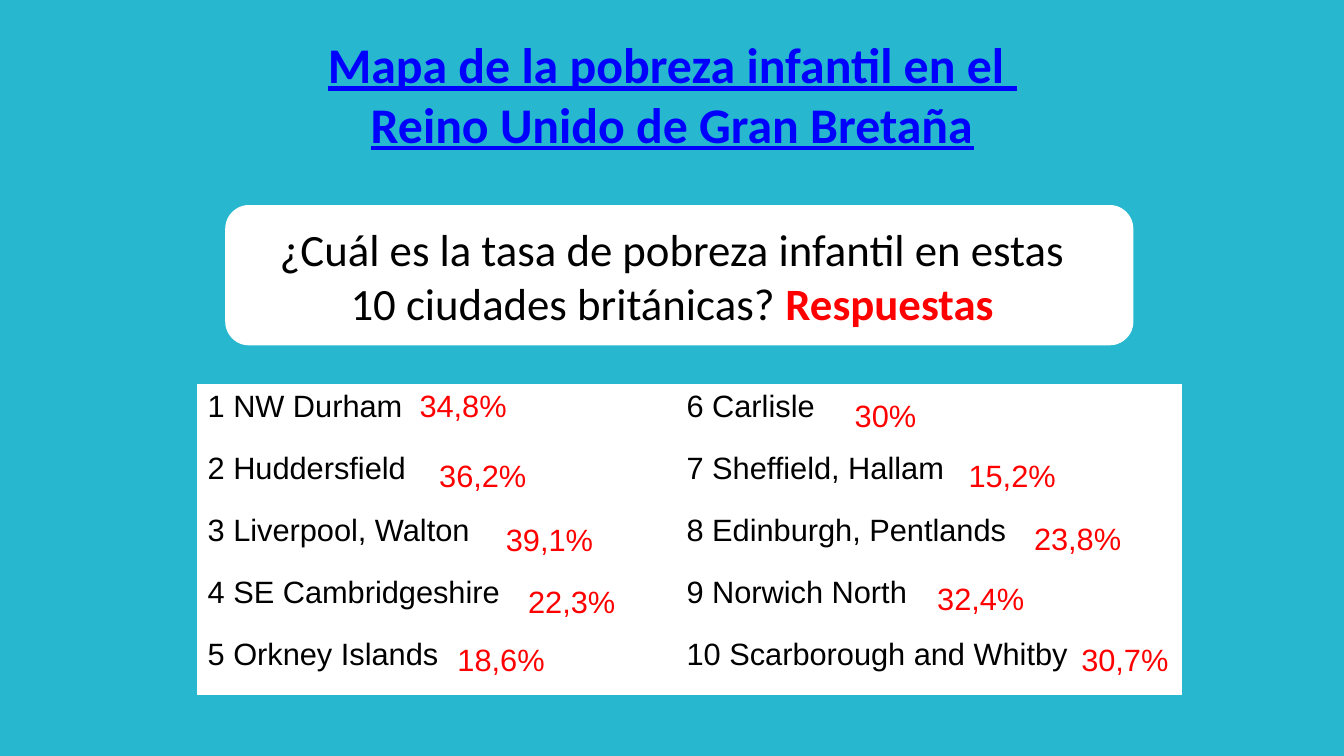
"""Build the slide with the child poverty rates of ten British cities."""
from pptx import Presentation
from pptx.dml.color import RGBColor
from pptx.enum.shapes import MSO_SHAPE
from pptx.enum.text import MSO_ANCHOR, PP_ALIGN
from pptx.util import Cm, Pt

TEAL = RGBColor(0x27, 0xB8, 0xCF)
WHITE = RGBColor(0xFF, 0xFF, 0xFF)
BLACK = RGBColor(0x00, 0x00, 0x00)
RED = RGBColor(0xFF, 0x00, 0x00)
BLUE = RGBColor(0x00, 0x00, 0xFF)

ROWS = [
    ("1 NW Durham  ", "6 Carlisle"),
    ("2 Huddersfield", "7 Sheffield, Hallam"),
    ("3 Liverpool, Walton", "8 Edinburgh, Pentlands"),
    ("4 SE Cambridgeshire", "9 Norwich North"),
    ("5 Orkney Islands", "10 Scarborough and Whitby"),
]
RATES = [
    ("36,2%", 10.82, 11.38),
    ("39,1%", 12.5, 13),
    ("22,3%", 13.06, 14.55),
    ("18,6%", 11.28, 16.03),
    ("30%", 21.29, 9.88),
    ("15,2%", 24.16, 11.38),
    ("23,8%", 25.81, 12.98),
    ("32,4%", 23.37, 14.48),
    ("30,7%", 27, 16.03),
]


def style(runs, size, name, color):
    """Set the font of some runs."""
    for r in runs:
        r.font.size = Pt(size)
        r.font.name = name
        r.font.color.rgb = color


def add_text(slide, text, left, top, width, height):
    """Add a wrapping text box and return its text frame."""
    tf = slide.shapes.add_textbox(Cm(left), Cm(top), Cm(width), Cm(height)).text_frame
    tf.word_wrap = True
    tf.text = text
    return tf


prs = Presentation()
prs.slide_width = Cm(33.87)
prs.slide_height = Cm(19.05)
s = prs.slides.add_slide(prs.slide_layouts[6])
s.background.fill.solid()
s.background.fill.fore_color.rgb = TEAL

panel = s.shapes.add_shape(MSO_SHAPE.ROUNDED_RECTANGLE, Cm(5.69), Cm(5.18), Cm(22.86), Cm(3.51))
panel.shadow.inherit = False
panel.fill.solid()
panel.fill.fore_color.rgb = WHITE
panel.line.color.rgb = WHITE
panel.line.width = Pt(0.75)

question = "¿Cuál es la tasa de pobreza infantil en estas\n10 ciudades británicas? "
tf = add_text(s, question, 5.51, 5.46, 22.86, 3.25)
for p in tf.paragraphs:
    p.alignment = PP_ALIGN.CENTER
    style(p.runs, 32, "Calibri", BLACK)
r = tf.paragraphs[-1].add_run()
r.text = "Respuestas"
style([r], 32, "Calibri", RED)
r.font.bold = True

table = s.shapes.add_table(5, 2, Cm(4.98), Cm(9.7), Cm(24.8), Cm(7.8)).table
table.columns[0].width = Cm(12.07)
table.columns[1].width = Cm(12.73)
table.first_row = False
table.horz_banding = False
for i, cities in enumerate(ROWS):
    for j, city in enumerate(cities):
        cell = table.cell(i, j)
        cell.fill.solid()
        cell.fill.fore_color.rgb = WHITE
        cell.text_frame.text = city
        style(cell.text_frame.paragraphs[0].runs, 22, "Arial", BLACK)
r = table.cell(0, 0).text_frame.paragraphs[0].add_run()
r.text = "34,8%"
style([r], 22, "Arial", RED)

tf = add_text(s, "", 5.51, 0.76, 22.86, 3.18)
tf.vertical_anchor = MSO_ANCHOR.MIDDLE
p = tf.paragraphs[0]
p.text = "Mapa de la pobreza infantil en el \vReino Unido de Gran Bretaña"
p.alignment = PP_ALIGN.CENTER
style(p.runs, 35.6, "Calibri", BLUE)
for r in p.runs:
    r.font.bold = True
    r.font.underline = True

for rate, left, top in RATES:
    tf = add_text(s, rate, left, top, 2.9, 1.2)
    style(tf.paragraphs[0].runs, 22, "Arial", RED)

prs.save("out.pptx")
